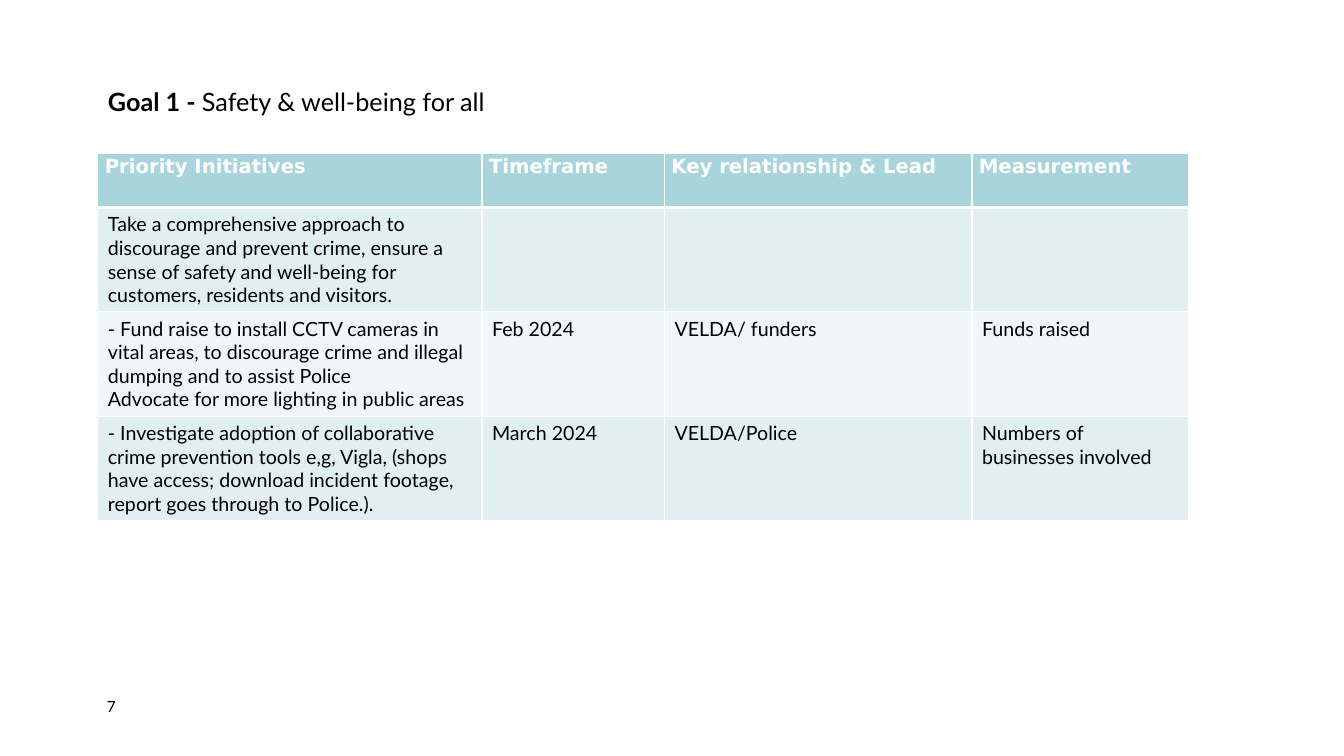
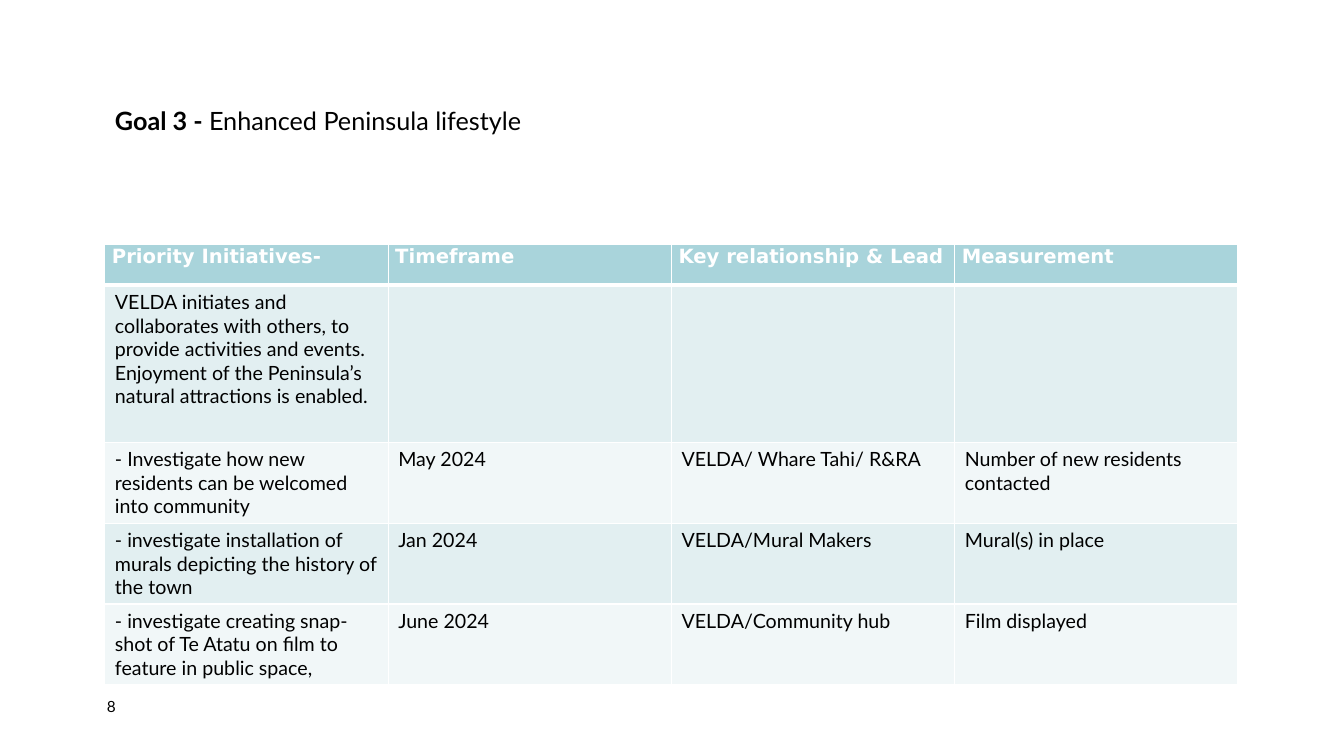
"""Build the two goal slides, each with a title, a table of initiatives and a page number."""
import dataclasses

import lxml.etree
import pptx
import pptx.dml.color
import pptx.enum.text
import pptx.oxml.ns
import pptx.util

Inches = pptx.util.Inches
Pt = pptx.util.Pt


@dataclasses.dataclass(frozen=True)
class Theme:
    """Colours, fonts and type sizes that the slides share."""
    text: str = "000000"
    header_text: str = "FFFFFF"
    rule: str = "FFFFFF"
    header_fill: str = "A9D4DB"
    bands: tuple = ("E2EFF1", "F1F7F8")
    body_font: str = "Lato"
    header_font: str = "DejaVu Sans"
    title_size: int = 18
    table_size: int = 14
    page_size: int = 11
    thin_rule: int = 1
    thick_rule: int = 3


@dataclasses.dataclass(frozen=True)
class Goal:
    """The content and table geometry of one goal slide."""
    page: int
    label: str
    name: str
    title_box: tuple
    table_origin: tuple
    columns: tuple
    row_heights: tuple
    rows: tuple


THEME = Theme()

GOALS = (
    Goal(
        page=7,
        label="Goal 1 - ",
        name="Safety & well-being for all",
        title_box=(0.97, 0.81, 6.73, 0.4),
        table_origin=(0.97, 1.52),
        columns=(3.81, 1.81, 3.05, 2.15),
        row_heights=(0.54,) + (1.03,) * 3,
        rows=(
            ("Priority Initiatives", "Timeframe", "Key relationship & Lead", "Measurement"),
            ("Take a comprehensive approach to discourage and prevent crime, ensure a sense "
             "of safety and well-being for customers, residents and visitors.", "", "", ""),
            ("- Fund raise to install CCTV cameras in vital areas, to discourage crime and "
             "illegal dumping and to assist Police\n"
             "Advocate for more lighting in public areas",
             "Feb 2024", "VELDA/ funders", "Funds raised"),
            ("- Investigate adoption of collaborative crime prevention tools e,g, Vigla, "
             "(shops have access; download incident footage, report goes through to Police.).",
             "March 2024", "VELDA/Police", "Numbers of businesses involved"),
        ),
    ),
    Goal(
        page=8,
        label="Goal 3 - ",
        name="Enhanced Peninsula lifestyle",
        title_box=(1.04, 0.99, 6.67, 0.4),
        table_origin=(1.04, 2.42),
        columns=(2.81,) * 4,
        row_heights=(0.41, 1.56) + (0.8,) * 3,
        rows=(
            ("Priority Initiatives-", "Timeframe", "Key relationship & Lead", "Measurement"),
            ("VELDA initiates and collaborates with others, to provide activities and events. "
             "Enjoyment of the Peninsula’s natural attractions is enabled.", "", "", ""),
            ("- Investigate how new residents can be welcomed into community",
             "May 2024", "VELDA/ Whare Tahi/ R&RA", "Number of new residents contacted"),
            ("- investigate installation of murals depicting the history of the town",
             "Jan 2024", "VELDA/Mural Makers", "Mural(s) in place"),
            ("- investigate creating snap-shot of Te Atatu on film to feature in public space,",
             "June 2024", "VELDA/Community hub", "Film displayed"),
        ),
    ),
)


def rgb(value):
    """Turn a hex string into a colour."""
    return pptx.dml.color.RGBColor.from_string(value)


def add_run(paragraph, text, size, font=THEME.body_font, colour=THEME.text, bold=False):
    """Append one formatted run to a paragraph."""
    run = paragraph.add_run()
    run.text = text
    run.font.size = Pt(size)
    run.font.name = font
    run.font.bold = bold
    run.font.color.rgb = rgb(colour)


def set_title(slide, goal):
    """Place the title placeholder and write the goal's label and name."""
    title = slide.shapes.title
    title.left, title.top, title.width, title.height = map(Inches, goal.title_box)
    frame = title.text_frame
    frame.word_wrap = True
    frame.auto_size = pptx.enum.text.MSO_AUTO_SIZE.NONE
    frame.vertical_anchor = pptx.enum.text.MSO_ANCHOR.TOP
    heading = frame.paragraphs[0]
    heading.alignment = pptx.enum.text.PP_ALIGN.LEFT
    add_run(heading, goal.label, THEME.title_size, bold=True)
    add_run(heading, goal.name, THEME.title_size)


def add_page_number(slide, page):
    """Write the page number at the foot of the slide."""
    footer = slide.shapes.add_textbox(*map(Inches, (1.06, 6.92, 0.57, 0.27)))
    frame = footer.text_frame
    frame.word_wrap = True
    frame.margin_left = frame.margin_right = frame.margin_top = frame.margin_bottom = 0
    add_run(frame.paragraphs[0], str(page), THEME.page_size)


def set_borders(cell, **widths):
    """Draw rules on a cell, with widths in points keyed by side: L, R, T, B."""
    qn = pptx.oxml.ns.qn
    properties = cell._tc.get_or_add_tcPr()
    for side, width in widths.items():
        line = lxml.etree.SubElement(properties, qn(f"a:ln{side}"), w=str(Pt(width)))
        fill = lxml.etree.SubElement(line, qn("a:solidFill"))
        lxml.etree.SubElement(fill, qn("a:srgbClr"), val=THEME.rule)


def fill_cell(cell, colour):
    """Give a cell a solid fill."""
    cell.fill.solid()
    cell.fill.fore_color.rgb = rgb(colour)


def format_header_cell(cell, text):
    """Write a column heading."""
    set_borders(cell, L=THEME.thin_rule, R=THEME.thin_rule,
                T=THEME.thin_rule, B=THEME.thick_rule)
    fill_cell(cell, THEME.header_fill)
    cell.margin_left = cell.margin_right = Inches(0.07)
    cell.margin_top = cell.margin_bottom = 0
    heading = cell.text_frame.paragraphs[0]
    heading.line_spacing = 1.07
    heading.space_after = Pt(8)
    add_run(heading, text, THEME.table_size, THEME.header_font, THEME.header_text, bold=True)


def format_body_cell(cell, text, row):
    """Write a body cell in the band colour of its row, one paragraph per line."""
    top = THEME.thick_rule if row == 1 else THEME.thin_rule
    set_borders(cell, L=THEME.thin_rule, R=THEME.thin_rule, T=top, B=THEME.thin_rule)
    fill_cell(cell, THEME.bands[(row - 1) % 2])
    frame = cell.text_frame
    for index, line in enumerate(text.splitlines()):
        paragraph = frame.add_paragraph() if index else frame.paragraphs[0]
        add_run(paragraph, line, THEME.table_size)


def add_initiatives(slide, goal):
    """Add the table of initiatives."""
    left, top = goal.table_origin
    extent = (left, top, sum(goal.columns), sum(goal.row_heights))
    table = slide.shapes.add_table(
        len(goal.rows), len(goal.columns), *map(Inches, extent)).table
    table.horz_banding = False
    for column, width in zip(table.columns, goal.columns):
        column.width = Inches(width)
    for row, (texts, height) in enumerate(zip(goal.rows, goal.row_heights)):
        table.rows[row].height = Inches(height)
        for column, text in enumerate(texts):
            cell = table.cell(row, column)
            if row == 0:
                format_header_cell(cell, text)
            else:
                format_body_cell(cell, text, row)


def main():
    """Build and save the presentation."""
    deck = pptx.Presentation()
    deck.slide_width = Inches(13.33)
    deck.slide_height = Inches(7.5)
    title_only = deck.slide_layouts.get_by_name("Title Only")
    for goal in GOALS:
        slide = deck.slides.add_slide(title_only)
        set_title(slide, goal)
        add_initiatives(slide, goal)
        add_page_number(slide, goal.page)
    deck.save("out.pptx")


if __name__ == "__main__":
    main()
